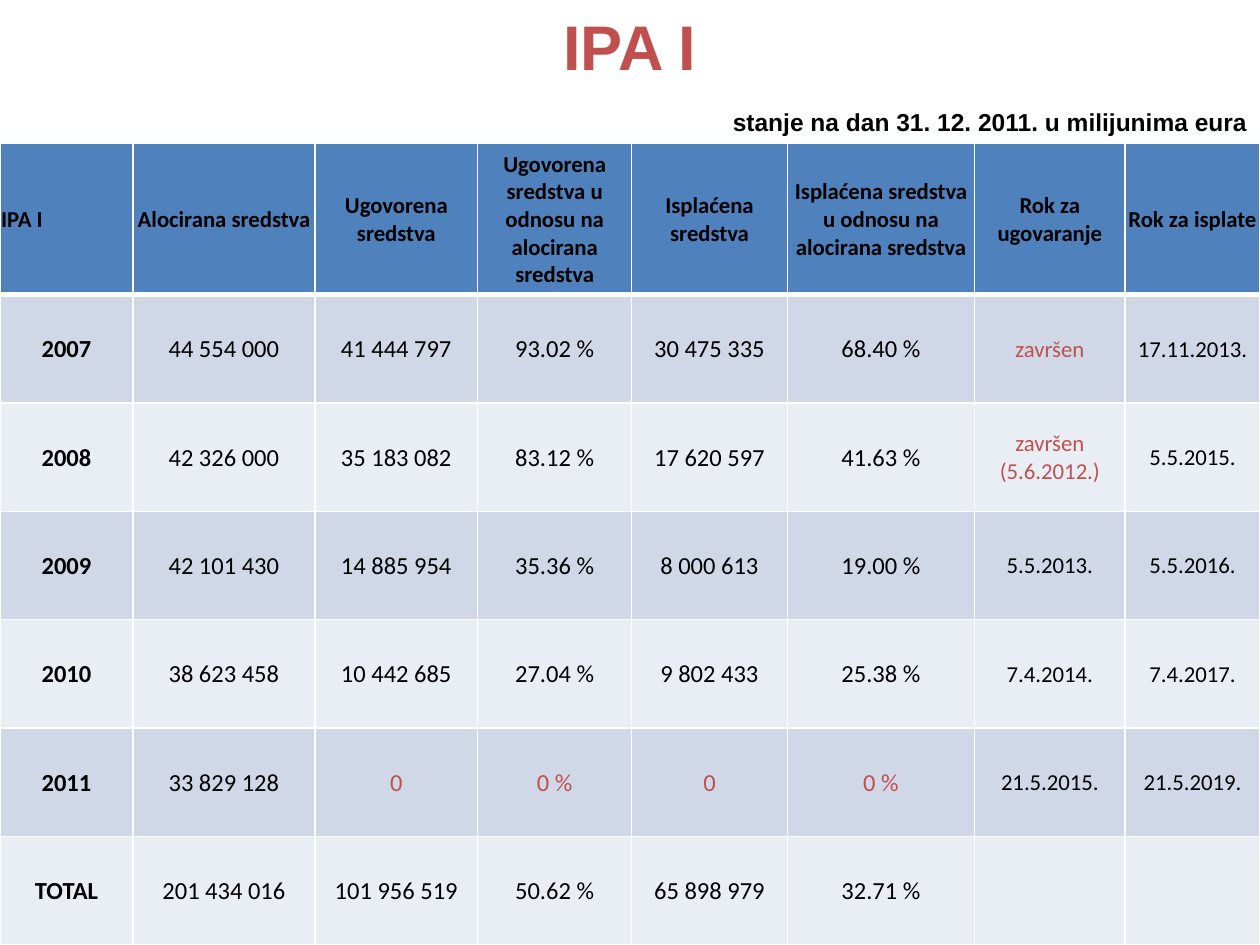
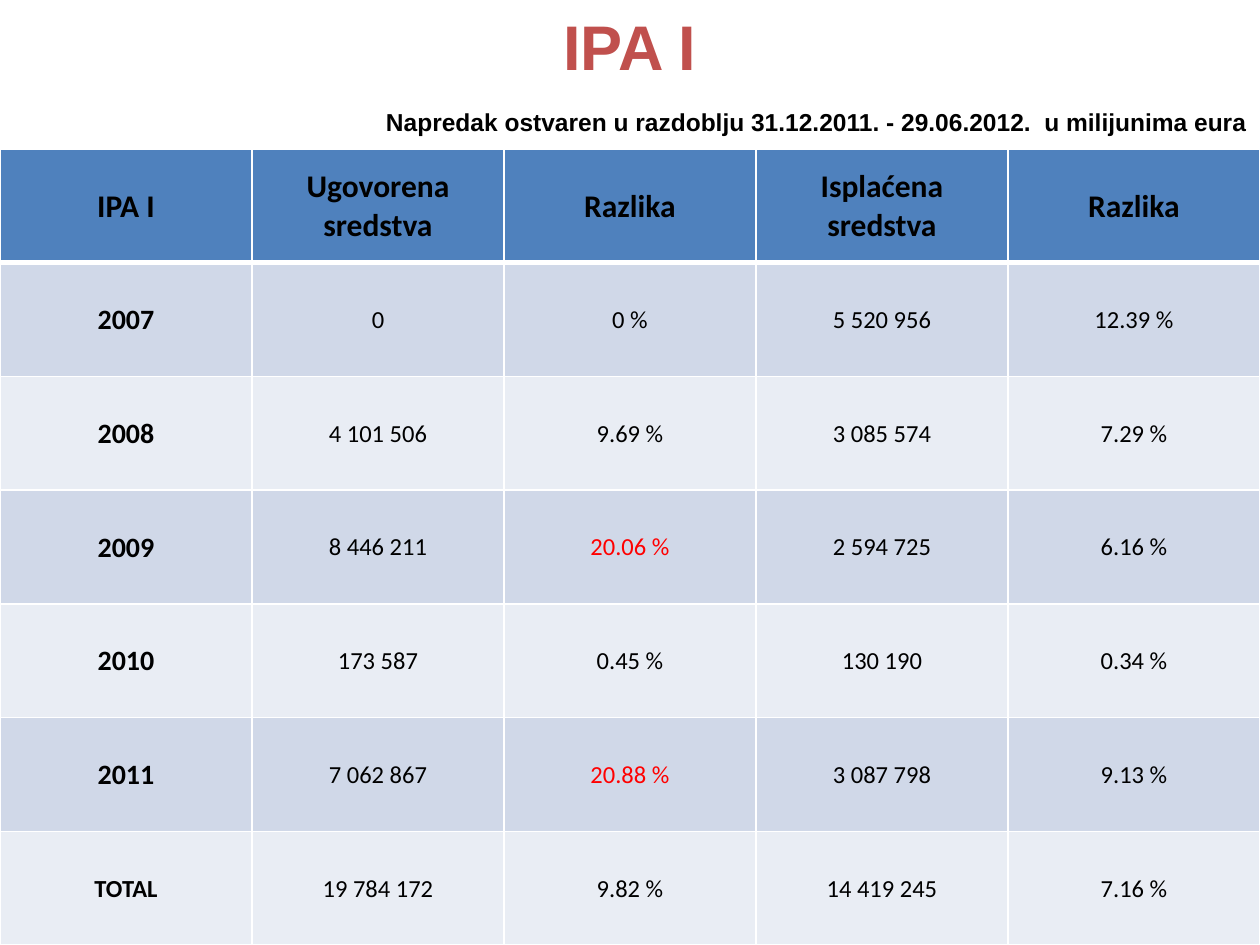
from collections import namedtuple
from dataclasses import dataclass

from lxml import etree
from pptx import Presentation
from pptx.dml.color import RGBColor
from pptx.enum import text
from pptx.oxml.ns import qn
from pptx.util import Pt

Box = namedtuple("Box", "left top width height")
TableStyle = namedtuple("TableStyle", "header_size label_size body_size date_size date_columns highlight")


@dataclass(frozen=True)
class Theme:
    heading_font: str = "Arial"
    table_font: str = "Calibri"
    title_size: int = 36
    subtitle_size: int = 14
    accent: str = "C0504D"
    warning: str = "FF0000"
    ink: str = "000000"
    header_fill: str = "4F81BD"
    band_fills: tuple = ("D0D8E8", "E9EDF4")
    rule: str = "FFFFFF"
    thin: float = 1
    thick: float = 3


THEME = Theme()
SLIDE_WIDTH, SLIDE_HEIGHT = 720, 540
TITLE_BOX = Box(0, 0.7, SLIDE_WIDTH, 51)

STATUS_WIDTHS = [76, 104, 93, 88, 89, 107, 86, 77]
STATUS_ROWS = [
    ["IPA I", "Alocirana sredstva", "Ugovorena sredstva",
     "Ugovorena sredstva u odnosu na alocirana sredstva", "Isplaćena sredstva",
     "Isplaćena sredstva u odnosu na alocirana sredstva", "Rok za ugovaranje", "Rok za isplate"],
    ["2007", "44 554 000", "41 444 797", "93.02 %", "30 475 335", "68.40 %", "završen", "17.11.2013."],
    ["2008", "42 326 000", "35 183 082", "83.12 %", "17 620 597", "41.63 %",
     "završen (5.6.2012.)", "5.5.2015."],
    ["2009", "42 101 430", "14 885 954", "35.36 %", "8 000 613", "19.00 %", "5.5.2013.", "5.5.2016."],
    ["2010", "38 623 458", "10 442 685", "27.04 %", "9 802 433", "25.38 %", "7.4.2014.", "7.4.2017."],
    ["2011", "33 829 128", "0", "0 %", "0", "0 %", "21.5.2015.", "21.5.2019."],
    ["TOTAL", "201 434 016", "101 956 519", "50.62 %", "65 898 979", "32.71 %", "", ""],
]
STATUS_STYLE = TableStyle(13, 14, 14, 13, (6, 7), dict.fromkeys(
    ["završen", "završen (5.6.2012.)", "0", "0 %"], THEME.accent))

PROGRESS_WIDTHS = [SLIDE_WIDTH / 5] * 5
PROGRESS_ROWS = [
    ["IPA I", "Ugovorena sredstva", "Razlika", "Isplaćena\vsredstva", "Razlika"],
    ["2007", "0", "0 %", "5 520 956", "12.39 %"],
    ["2008", "4 101 506", "9.69 %", "3 085 574", "7.29 %"],
    ["2009", "8 446 211", "20.06 %", "2 594 725", "6.16 %"],
    ["2010", "173 587", "0.45 %", "130 190", "0.34 %"],
    ["2011", "7 062 867", "20.88 %", "3 087 798", "9.13 %"],
    ["TOTAL", "19 784 172", "9.82 %", "14 419 245", "7.16 %"],
]
PROGRESS_STYLE = TableStyle(18, 16, 14, 14, (), dict.fromkeys(["20.06 %", "20.88 %"], THEME.warning))


def set_font(paragraph, name, size, color, bold):
    font = paragraph.font
    font.name, font.size, font.bold = name, Pt(size), bold
    font.color.rgb = RGBColor.from_string(color)


def add_heading(slide, box, wording, size, color, alignment):
    frame = slide.shapes.add_textbox(*map(Pt, box)).text_frame
    frame.word_wrap = True
    paragraph = frame.paragraphs[0]
    paragraph.text = wording
    paragraph.alignment = alignment
    set_font(paragraph, THEME.heading_font, size, color, True)


def set_borders(cell, top, bottom):
    """Rule all four sides; call before filling, since lines precede the fill in the XML."""
    properties = cell._tc.get_or_add_tcPr()
    for side, width in (("L", THEME.thin), ("R", THEME.thin), ("T", top), ("B", bottom)):
        line = etree.SubElement(properties, qn(f"a:ln{side}"), w=str(Pt(width)))
        fill = etree.SubElement(line, qn("a:solidFill"))
        etree.SubElement(fill, qn("a:srgbClr"), val=THEME.rule)


def format_cell(cell, row, column, style, last_row):
    is_header, is_label = row == 0, column == 0
    set_borders(cell, THEME.thick if row == 1 else THEME.thin, THEME.thick if is_header else THEME.thin)
    cell.fill.solid()
    cell.fill.fore_color.rgb = RGBColor.from_string(
        THEME.header_fill if is_header else THEME.band_fills[(row - 1) % 2])
    cell.vertical_anchor = text.MSO_ANCHOR.MIDDLE
    cell.margin_left = cell.margin_right = cell.margin_top = Pt(0.7)
    cell.margin_bottom = 0

    if is_header:
        size = style.header_size
    elif is_label and row != last_row:
        size = style.label_size
    else:
        size = style.date_size if column in style.date_columns else style.body_size
    color = THEME.ink if is_header else style.highlight.get(cell.text, THEME.ink)
    for paragraph in cell.text_frame.paragraphs:
        paragraph.alignment = text.PP_ALIGN.CENTER
        set_font(paragraph, THEME.table_font, size, color, is_header or is_label)


def add_funds_table(slide, box, rows, widths, header_height, style):
    table = slide.shapes.add_table(len(rows), len(widths), *map(Pt, box)).table
    for column, width in zip(table.columns, widths):
        column.width = Pt(width)
    body_height = (box.height - header_height) / (len(rows) - 1)
    for r, values in enumerate(rows):
        table.rows[r].height = Pt(body_height if r else header_height)
        for c, value in enumerate(values):
            cell = table.cell(r, c)
            cell.text = value
            format_cell(cell, r, c, style, len(rows) - 1)
    return table


def add_funds_slide(presentation, subtitle, subtitle_left, table_top, rows, widths, header_height, style):
    slide = presentation.slides.add_slide(presentation.slide_layouts[6])
    table_box = Box(0, table_top, SLIDE_WIDTH, SLIDE_HEIGHT - table_top)
    table = add_funds_table(slide, table_box, rows, widths, header_height, style)
    add_heading(slide, TITLE_BOX, "IPA I", THEME.title_size, THEME.accent, text.PP_ALIGN.CENTER)
    subtitle_box = Box(subtitle_left, 57.6, SLIDE_WIDTH - subtitle_left, 24.5)
    add_heading(slide, subtitle_box, subtitle, THEME.subtitle_size, THEME.ink, text.PP_ALIGN.RIGHT)
    return table


def main():
    presentation = Presentation()
    presentation.slide_width, presentation.slide_height = Pt(SLIDE_WIDTH), Pt(SLIDE_HEIGHT)
    status_table = add_funds_slide(
        presentation, "stanje na dan 31. 12. 2011. u milijunima eura", 396.7, 82,
        STATUS_ROWS, STATUS_WIDTHS, 86.4, STATUS_STYLE)
    status_table.cell(0, 0).text_frame.paragraphs[0].alignment = text.PP_ALIGN.LEFT
    add_funds_slide(
        presentation, "Napredak ostvaren u razdoblju 31.12.2011. - 29.06.2012.  u milijunima eura", 193.7, 85,
        PROGRESS_ROWS, PROGRESS_WIDTHS, 65, PROGRESS_STYLE)
    presentation.save("out.pptx")


if __name__ == "__main__":
    main()
